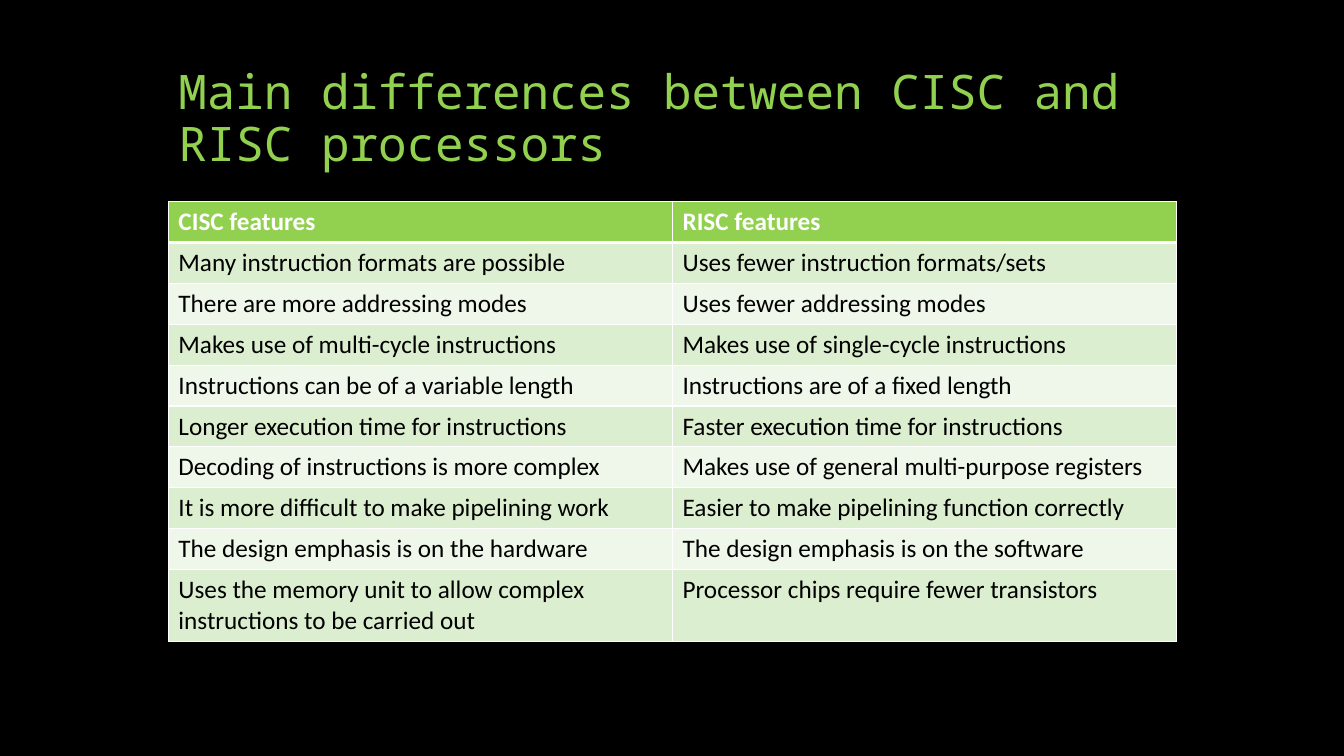
from typing import NamedTuple

from lxml.etree import SubElement
from pptx import Presentation
from pptx.dml.color import RGBColor
from pptx.enum.text import MSO_ANCHOR, MSO_AUTO_SIZE, PP_ALIGN
from pptx.oxml.ns import qn
from pptx.util import Inches, Pt

GREEN, WHITE, BLACK = "92D050", "FFFFFF", "000000"
BANDS = ("DCEED0", "EEF7E9")
LEFT, WIDTH = Inches(1.67), Inches(10)
TABLE_TOP, LAST_ROW_HEIGHT = Inches(2), Inches(0.7)
UPPER_ROWS_HEIGHT = Inches(3.65)


class Difference(NamedTuple):
    """One table row: a CISC feature and its RISC counterpart."""
    cisc: str
    risc: str


class RowStyle(NamedTuple):
    """Fill, text and horizontal border settings of a table row."""
    fill: str
    ink: str
    bold: bool
    top: int
    bottom: int


DIFFERENCES = [
    Difference("CISC features", "RISC features"),
    Difference("Many instruction formats are possible", "Uses fewer instruction formats/sets"),
    Difference("There are more addressing modes", "Uses fewer addressing modes"),
    Difference("Makes use of multi-cycle instructions", "Makes use of single-cycle instructions"),
    Difference("Instructions can be of a variable length", "Instructions are of a fixed length"),
    Difference("Longer execution time for instructions", "Faster execution time for instructions"),
    Difference("Decoding of instructions is more complex", "Makes use of general multi-purpose registers"),
    Difference("It is more difficult to make pipelining work", "Easier to make pipelining function correctly"),
    Difference("The design emphasis is on the hardware", "The design emphasis is on the software"),
    Difference("Uses the memory unit to allow complex instructions to be carried out",
               "Processor chips require fewer transistors"),
]


def colour(value: str) -> RGBColor:
    """Turn a hex string into a colour."""
    return RGBColor.from_string(value)


def add_span(para, text: str, font: str, size: int, ink: str, bold: bool = False) -> None:
    """Add one formatted run to a paragraph."""
    span = para.add_run()
    span.text = text
    span.font.name = font
    span.font.size = Pt(size)
    span.font.bold = bold
    span.font.color.rgb = colour(ink)


def add_title(page, text: str) -> None:
    """Place and fill the title placeholder."""
    title = page.shapes.title
    title.left, title.top = LEFT, Inches(0.5)
    title.width, title.height = WIDTH, Inches(1.25)
    frame = title.text_frame
    frame.word_wrap = True
    frame.auto_size = MSO_AUTO_SIZE.NONE
    frame.vertical_anchor = MSO_ANCHOR.BOTTOM
    para = frame.paragraphs[0]
    para.alignment = PP_ALIGN.LEFT
    para.line_spacing = 0.9
    add_span(para, text, "Noto Sans Mono", 34, GREEN)


def row_style(index: int) -> RowStyle:
    """Choose the header style or one of the alternating bands."""
    if index == 0:
        return RowStyle(GREEN, WHITE, True, 1, 3)
    return RowStyle(BANDS[(index - 1) % 2], BLACK, False, 3 if index == 1 else 1, 1)


def draw_cell(cell, text: str, style: RowStyle) -> None:
    """Border, fill and write one table cell."""
    properties = cell._tc.get_or_add_tcPr()
    borders = {"lnL": 1, "lnR": 1, "lnT": style.top, "lnB": style.bottom}
    for side, points in borders.items():
        line = SubElement(properties, qn(f"a:{side}"), w=str(Pt(points)))
        SubElement(SubElement(line, qn("a:solidFill")), qn("a:srgbClr"), val=WHITE)
    cell.fill.solid()
    cell.fill.fore_color.rgb = colour(style.fill)
    add_span(cell.text_frame.paragraphs[0], text, "Calibri", 18, style.ink, style.bold)


def add_differences(page, differences: list[Difference]) -> None:
    """Draw the comparison table."""
    last = len(differences) - 1
    table = page.shapes.add_table(len(differences), 2, LEFT, TABLE_TOP, WIDTH,
                                  UPPER_ROWS_HEIGHT + LAST_ROW_HEIGHT).table
    for index, difference in enumerate(differences):
        table.rows[index].height = LAST_ROW_HEIGHT if index == last else UPPER_ROWS_HEIGHT // last
        for column, text in enumerate(difference):
            draw_cell(table.cell(index, column), text, row_style(index))


def main() -> None:
    """Build and save the slide."""
    deck = Presentation()
    deck.slide_width, deck.slide_height = Inches(13.33), Inches(7.5)
    page = deck.slides.add_slide(deck.slide_layouts[5])
    page.background.fill.solid()
    page.background.fill.fore_color.rgb = colour(BLACK)
    add_title(page, "Main differences between CISC and RISC processors")
    add_differences(page, DIFFERENCES)
    deck.save("out.pptx")


if __name__ == "__main__":
    main()
